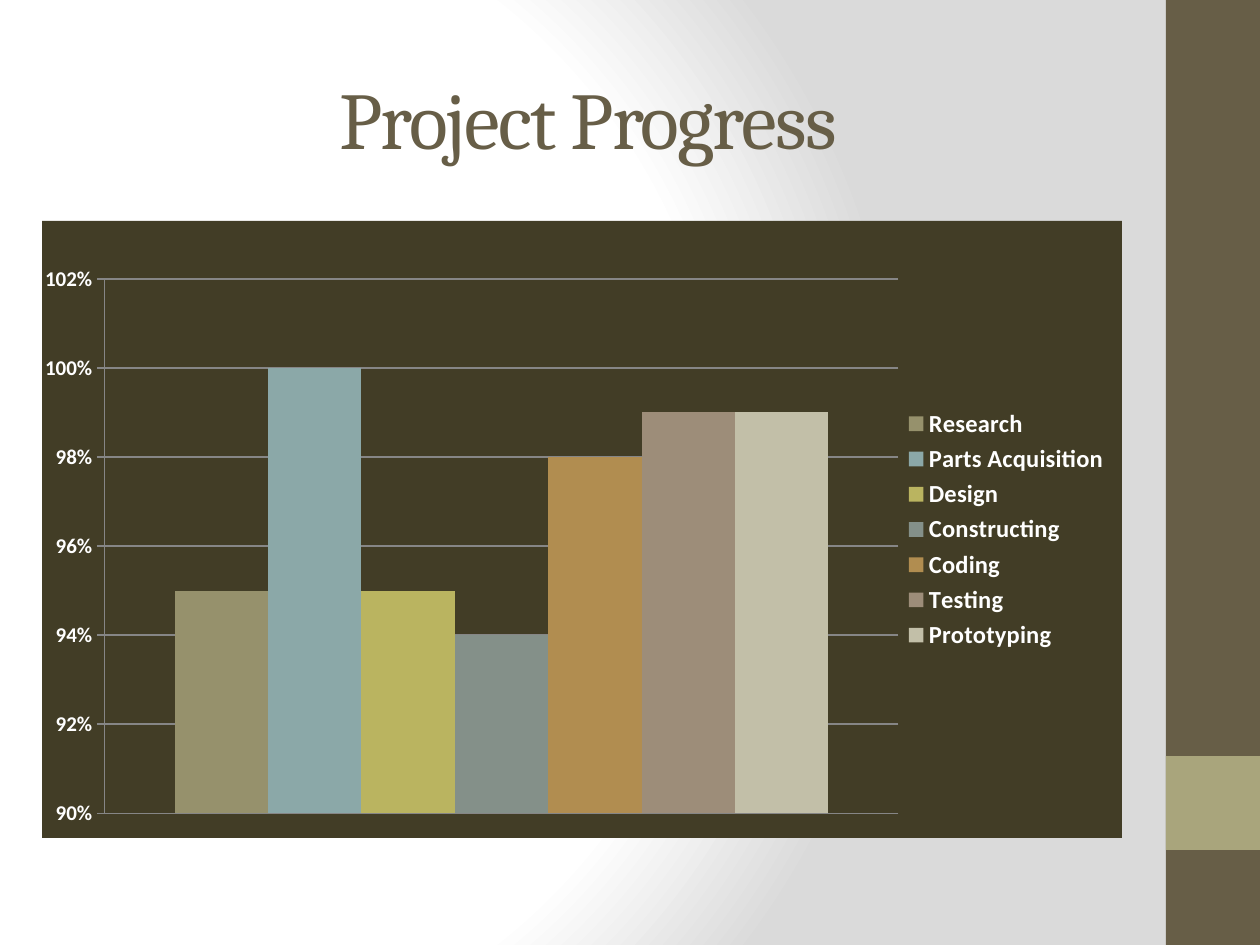
from pptx import Presentation
from pptx.chart.data import CategoryChartData
from pptx.dml.color import RGBColor
from pptx.enum.chart import XL_CHART_TYPE, XL_LEGEND_POSITION, XL_TICK_MARK
from pptx.enum.shapes import MSO_SHAPE
from pptx.enum.text import MSO_ANCHOR, PP_ALIGN
from pptx.oxml import parse_xml
from pptx.oxml.ns import nsdecls
from pptx.util import Emu, Pt

PX = 914400 / 126
BROWN, KHAKI, DARK, WHITE, GREY = "675E47", "A9A57C", "423D26", "FFFFFF", "868686"
PROGRESS = [
    ("Research", 0.95, "96916C"),
    ("Parts Acquisition", 1, "8BA8A8"),
    ("Design", 0.95, "BAB460"),
    ("Constructing", 0.94, "849089"),
    ("Coding", 0.98, "B18D50"),
    ("Testing", 0.99, "9D8D79"),
    ("Prototyping", 0.99, "C2BFA8"),
]


def px(*lengths):
    """Turn pixel lengths into EMU."""
    return [Emu(round(n * PX)) for n in lengths]


def rgb(value):
    """Turn a hex string into a colour."""
    return RGBColor.from_string(value)


def set_format(obj, values):
    """Set attributes from a dict."""
    for name, value in values.items():
        setattr(obj, name, value)


def set_font(font, color, **values):
    """Format a font."""
    set_format(font, values)
    font.color.rgb = rgb(color)


def add_background(s):
    """Give the slide a circular gradient."""
    stops = "".join(
        f'<a:gs pos="{pos}"><a:srgbClr val="{color}"/></a:gs>'
        for pos, color in [(0, WHITE), (75000, WHITE), (100000, "DADADA")]
    )
    s._element.cSld.insert(0, parse_xml(
        f'<p:bg {nsdecls("p", "a")}><p:bgPr><a:gradFill rotWithShape="1">'
        f'<a:gsLst>{stops}</a:gsLst><a:path path="circle">'
        '<a:fillToRect l="20000" t="50000" r="100000" b="50000"/></a:path>'
        '</a:gradFill><a:effectLst/></p:bgPr></p:bg>'
    ))


def add_band(s, box, color):
    """Add a plain rectangle."""
    sp = s.shapes.add_shape(MSO_SHAPE.RECTANGLE, *px(*box))
    sp.shadow.inherit = False
    sp.fill.solid()
    sp.fill.fore_color.rgb = rgb(color)
    sp.line.fill.background()


def add_title(s, text, box):
    """Fill and format the title placeholder."""
    sp = s.shapes.title
    set_format(sp, dict(zip(("left", "top", "width", "height"), px(*box))))
    tf = sp.text_frame
    set_format(tf, {"vertical_anchor": MSO_ANCHOR.MIDDLE, "word_wrap": True})
    p = tf.paragraphs[0]
    p.alignment = PP_ALIGN.CENTER
    r = p.add_run()
    r.text = text
    set_font(r.font, BROWN, name="Cambria", size=Pt(46))
    r.font._element.set("spc", "-100")


def place_plot(chart, x, y, w, h):
    """Fix the inner plot area and fill the chart background."""
    area = chart._chartSpace.chart.plotArea
    for old in area.findall("{*}layout"):
        area.remove(old)
    sizes = "".join(f'<c:{k} val="{v}"/>' for k, v in zip("xywh", (x, y, w, h)))
    area.insert(0, parse_xml(
        f'<c:layout {nsdecls("c")}><c:manualLayout><c:layoutTarget val="inner"/>'
        f'<c:xMode val="edge"/><c:yMode val="edge"/>{sizes}</c:manualLayout></c:layout>'
    ))
    chart._chartSpace.chart.addnext(parse_xml(
        f'<c:spPr {nsdecls("c", "a")}><a:solidFill><a:srgbClr val="{DARK}"/>'
        '</a:solidFill><a:ln><a:noFill/></a:ln></c:spPr>'
    ))


def add_progress_chart(s, box):
    """Add the clustered column chart of progress."""
    data = CategoryChartData(number_format="0%")
    data.categories = ["1"]
    for name, value, _ in PROGRESS:
        data.add_series(name, [value])
    chart = s.shapes.add_chart(XL_CHART_TYPE.COLUMN_CLUSTERED, *px(*box), data).chart
    set_format(chart, {"has_title": False, "has_legend": True})
    set_font(chart.font, "2F2B20", name="Calibri", size=Pt(10))
    place_plot(chart, 0.058, 0.094, 0.735, 0.866)
    set_format(chart.plots[0], {"gap_width": 150, "vary_by_categories": False})
    for series, (_, _, color) in zip(chart.plots[0].series, PROGRESS):
        series.format.fill.solid()
        series.format.fill.fore_color.rgb = rgb(color)
    chart.category_axis.visible = False
    axis = chart.value_axis
    set_format(axis, {
        "minimum_scale": 0.9, "maximum_scale": 1.02, "major_unit": 0.02,
        "has_major_gridlines": True, "major_tick_mark": XL_TICK_MARK.OUTSIDE,
    })
    set_format(axis.tick_labels, {"number_format": "0%", "number_format_is_linked": False})
    for line in (axis.format.line, axis.major_gridlines.format.line):
        line.color.rgb = rgb(GREY)
        line.width = Pt(0.75)
    set_font(axis.tick_labels.font, WHITE, name="Calibri", size=Pt(12), bold=True)
    legend = chart.legend
    set_format(legend, {"position": XL_LEGEND_POSITION.RIGHT, "include_in_layout": False})
    set_font(legend.font, WHITE, name="Calibri", size=Pt(14), bold=True)


def main():
    """Build the slide."""
    prs = Presentation()
    prs.slide_width, prs.slide_height = px(1260, 945)
    s = prs.slides.add_slide(prs.slide_layouts[5])
    add_background(s)
    add_band(s, (1166, 0, 94, 945), BROWN)
    add_band(s, (1166, 756, 94, 94), KHAKI)
    add_title(s, "Project Progress", (63, 38, 1050, 158))
    add_progress_chart(s, (42, 221, 1080, 617))
    prs.save("out.pptx")


if __name__ == "__main__":
    main()
